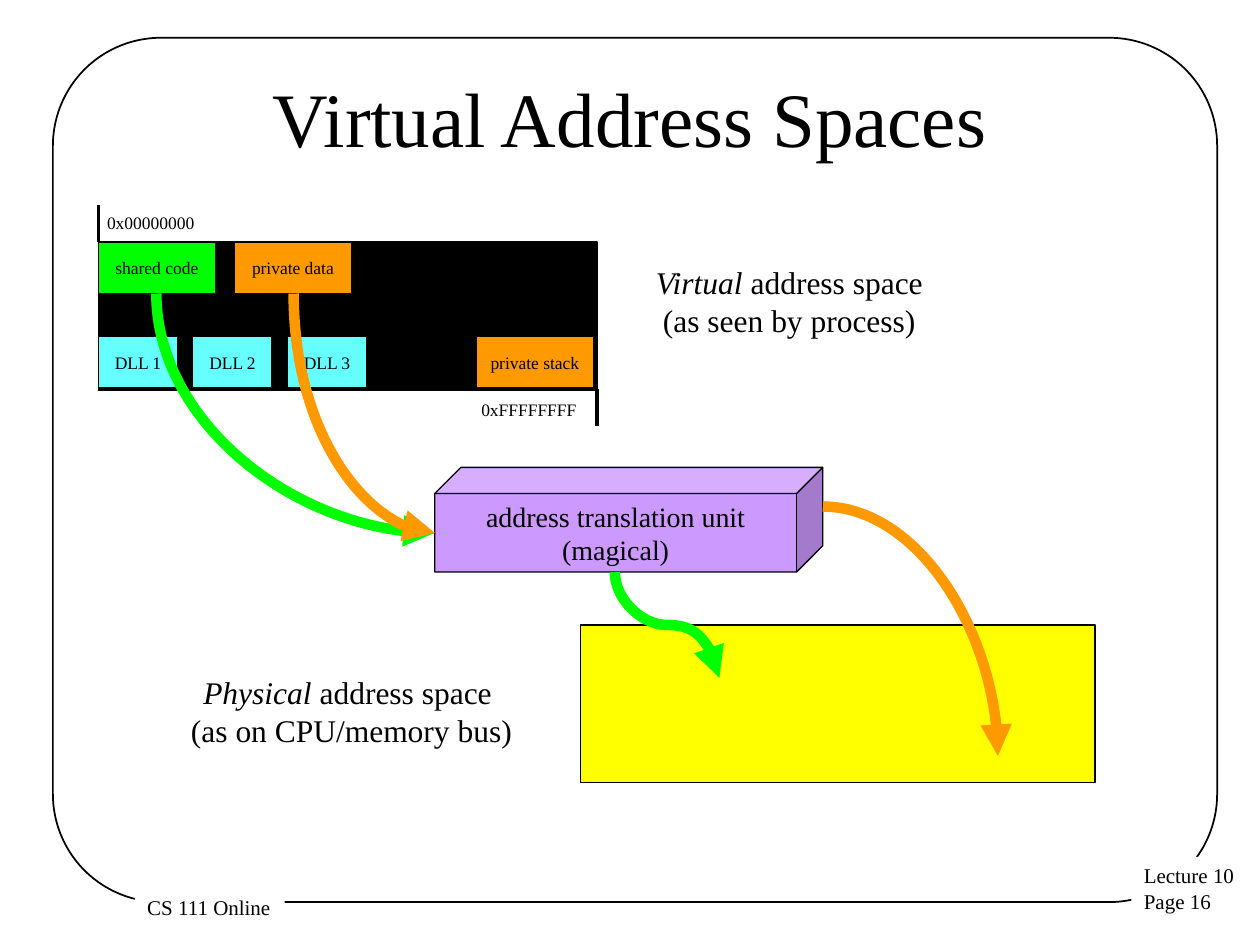
from lxml.etree import SubElement
from pptx import Presentation
from pptx.dml.color import RGBColor
from pptx.enum.shapes import MSO_CONNECTOR as Link, MSO_SHAPE as Shape
from pptx.enum.text import MSO_ANCHOR as Anchor, MSO_AUTO_SIZE as Auto, PP_ALIGN as Align
from pptx.oxml.ns import qn
from pptx.util import Inches, Pt

BLACK = RGBColor(0, 0, 0)
WHITE = RGBColor(255, 255, 255)
GREEN = RGBColor(0, 255, 0)
ORANGE = RGBColor(255, 153, 0)
CYAN = RGBColor(102, 255, 255)
YELLOW = RGBColor(255, 255, 0)
PURPLE = RGBColor(204, 153, 255)
FONT = "Times New Roman"

TITLE = "Virtual Address Spaces"
FOOTERS = [
    (["Lecture 10", "Page 16"], (8.98, 6.8, 0.93, 0.51)),
    (["CS 111 Online"], (1.07, 7.05, 1.19, 0.3)),
]
LEFT, TOP, LOW = 0.78, 1.92, 2.67
WIDE, SMALL, HIGH, STEP = 0.93, 0.63, 0.41, 0.75
PARTS = [
    ("shared code", LEFT, TOP, WIDE, GREEN),
    ("private data", 1.86, TOP, WIDE, ORANGE),
    ("private stack", 3.78, LOW, WIDE, ORANGE),
] + [(f"DLL {i + 1}", LEFT + i * STEP, LOW, SMALL, CYAN) for i in range(3)]
TICKS = [(LEFT, 1.63, TOP), (4.74, 3.09, 3.38)]
ENDS = [("0x00000000", (0.85, 1.68, 0.7, 0.17)), ("0xFFFFFFFF", (3.82, 3.17, 0.77, 0.17))]
SPACES = [
    ("Virtual ", "(as seen by process)", (5.08, 2.04, 2.37, 0.71)),
    ("Physical ", "(as on CPU/memory bus)", (1.4, 5.29, 2.78, 0.71)),
]
UNIT = ["address translation unit", "(magical)"]
CURVES = [
    ((1.24, 2.33), (3.45, 4.23), GREEN, 2, True),
    ((4.88, 4.54), (5.71, 5.38), GREEN, 3, True),
    ((2.33, 2.33), (3.45, 4.23), ORANGE, 2, True),
    ((6.53, 4.02), (7.92, 6), ORANGE, 2, False),
]


def write(shape, lines, size, align=Align.LEFT, anchor=Anchor.TOP, pad=None, grow=False):
    frame = shape.text_frame
    frame.word_wrap = False
    frame.vertical_anchor = anchor
    frame.auto_size = Auto.SHAPE_TO_FIT_TEXT if grow else Auto.NONE
    if pad is not None:
        frame.margin_left = frame.margin_right = Inches(pad[0])
        frame.margin_top = frame.margin_bottom = Inches(pad[1])
    for i, line in enumerate(lines):
        para = frame.add_paragraph() if i else frame.paragraphs[0]
        para.alignment = align
        para.font.size, para.font.name = Pt(size), FONT
        para.font.color.rgb = BLACK
        for text, slant in [(line, False)] if isinstance(line, str) else line:
            run = para.add_run()
            run.text = text
            if slant:
                run.font.italic = True


def draw(slide, kind, box, fill=None, line=0.75):
    shape = slide.shapes.add_shape(kind, *map(Inches, box))
    shape.shadow.inherit = False
    if fill is None:
        shape.fill.background()
    else:
        shape.fill.solid()
        shape.fill.fore_color.rgb = fill
    if line:
        shape.line.color.rgb, shape.line.width = BLACK, Pt(line)
    else:
        shape.line.fill.background()
    return shape


def label(slide, lines, box, size, **style):
    shape = slide.shapes.add_textbox(*map(Inches, box))
    write(shape, lines, size, grow=True, **style)


def link(slide, kind, start, end, color, width):
    wire = slide.shapes.add_connector(kind, *map(Inches, start + end))
    wire.line.color.rgb, wire.line.width = color, Pt(width)
    SubElement(wire._element.spPr, qn("a:effectLst"))
    return wire


def curve(slide, start, end, color, bends, down):
    (x1, y1), (x2, y2) = start, end
    if down:
        mx, my = (x1 + x2) / 2, (y1 + y2) / 2
        dx, dy = (x2 - x1) / 2, (y2 - y1) / 2
        start, end = (mx - dy, my - dx), (mx + dy, my + dx)
    wire = link(slide, Link.CURVE, start, end, color, 6)
    props = wire._element.spPr
    props.find(qn("a:prstGeom")).set("prst", f"curvedConnector{bends}")
    if down:
        frame = props.find(qn("a:xfrm"))
        frame.set("rot", str(270 * 60000))
        frame.set("flipH", "1")
    SubElement(props.find(qn("a:ln")), qn("a:tailEnd"), type="triangle")


def main():
    deck = Presentation()
    deck.slide_width, deck.slide_height = Inches(10), Inches(7.5)
    slide = deck.slides.add_slide(deck.slide_layouts[5])

    title = slide.shapes.title
    title.left, title.top, title.width, title.height = map(Inches, (0.5, 0.3, 9, 1.25))
    write(title, [TITLE], 44, Align.CENTER, Anchor.MIDDLE)

    border = draw(slide, Shape.ROUNDED_RECTANGLE, (0.42, 0.3, 9.24, 6.86), line=1)
    border.adjustments[0] = 0.125
    for lines, box in FOOTERS:
        write(draw(slide, Shape.RECTANGLE, box, WHITE, 0), lines, 12, grow=True)

    draw(slide, Shape.RECTANGLE, (LEFT, TOP, 3.96, 1.18), BLACK)
    for x, y1, y2 in TICKS:
        link(slide, Link.STRAIGHT, (x, y1), (x, y2), BLACK, 0)
    for text, box in ENDS:
        label(slide, [text], box, 10, pad=(0, 0))
    for text, x, y, width, color in PARTS:
        part = draw(slide, Shape.RECTANGLE, (x, y, width, HIGH), color)
        write(part, [text], 10, Align.CENTER, Anchor.MIDDLE, (0.09, 0.04))

    draw(slide, Shape.RECTANGLE, (4.61, 4.96, 4.08, 1.25), YELLOW)
    for name, note, box in SPACES:
        head = [(name, True), ("address space ", False)]
        label(slide, [head, note], box, 18, align=Align.CENTER)

    unit = draw(slide, Shape.CUBE, (3.45, 3.71, 3.08, 0.83), PURPLE)
    write(unit, UNIT, 16, Align.CENTER, Anchor.MIDDLE)
    for item in CURVES:
        curve(slide, *item)

    deck.save("out.pptx")


if __name__ == "__main__":
    main()
